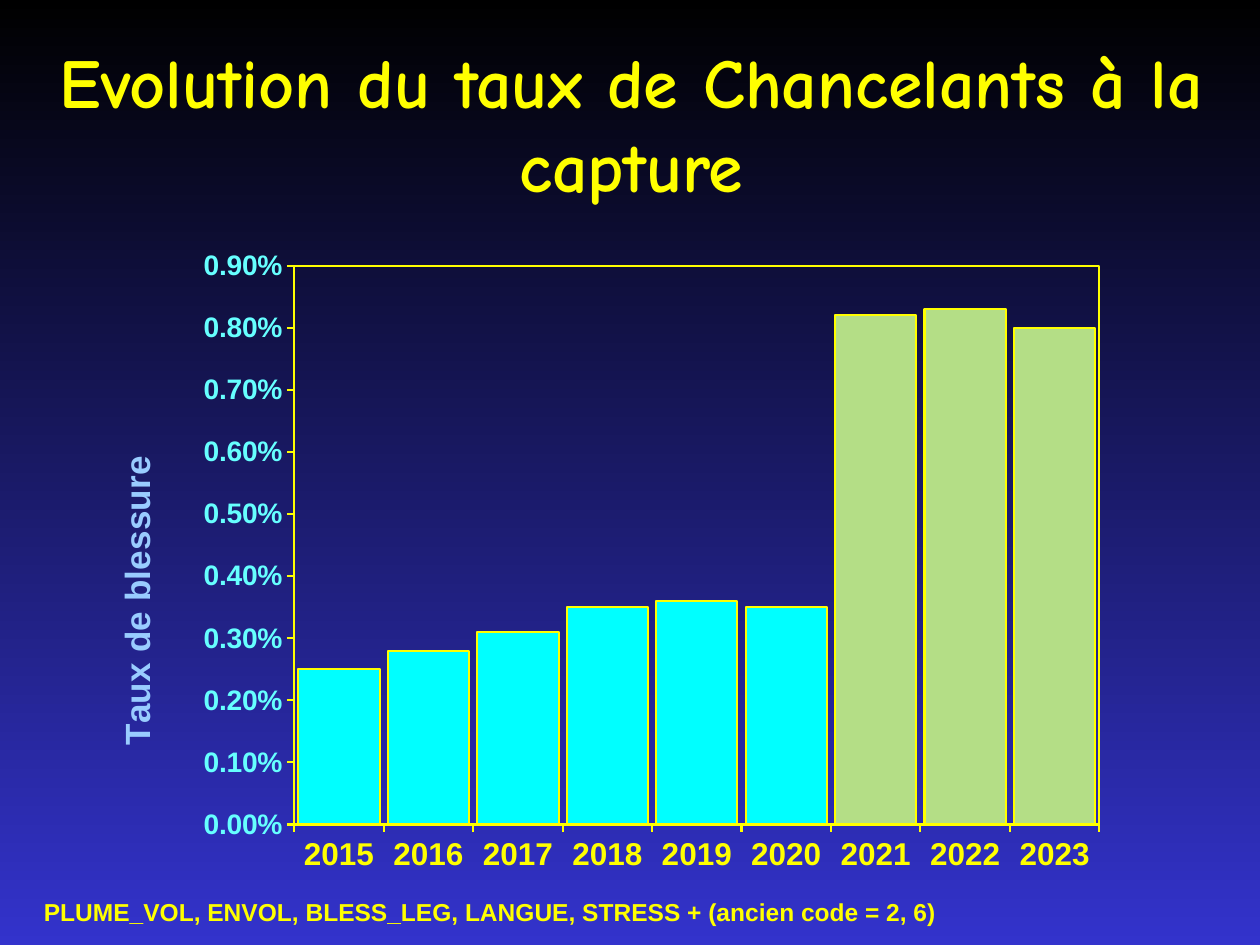
import pptx
import pptx.util
import pptx.dml.color
import pptx.chart.data
import pptx.enum.chart
import pptx.enum.text
import pptx.oxml
import pptx.oxml.ns

Pt = pptx.util.Pt
qn = pptx.oxml.ns.qn
YELLOW, CYAN, GREEN = "FFFF00", "00FFFF", "B4DE86"
AQUA, SKY = "66FFFF", "99CCFF"


def paint(part, tint):
    if hasattr(part, "solid"):
        part.solid()
        part.fore_color.rgb = pptx.dml.color.RGBColor.from_string(tint)
    else:
        part.rgb = pptx.dml.color.RGBColor.from_string(tint)


def style(font, face, size, tint):
    font.name, font.size, font.bold = face, Pt(size), True
    paint(font.fill, tint)


deck = pptx.Presentation()
deck.slide_width = pptx.util.Inches(10)
deck.slide_height = pptx.util.Inches(7.5)
col, row = deck.slide_width / 100, deck.slide_height / 100
slide = deck.slides.add_slide(deck.slide_layouts[6])

back = slide.background.fill
back.gradient()
back.gradient_angle = 270
for stop, place, tint in zip(back.gradient_stops, (0, 1), ("000000", "3333CC")):
    stop.position = place
    paint(stop.color, tint)

texts = [
    ("Evolution du taux de Chancelants à la capture", "Comic Neue", 40,
     (1.7, 3.47, 96.8, 15.2), True, pptx.enum.text.PP_ALIGN.CENTER),
    ("PLUME_VOL, ENVOL, BLESS_LEG, LANGUE, STRESS + (ancien code = 2, 6)", "Arial", 14,
     (2.5, 94.27, 73.3, 4.53), False, pptx.enum.text.PP_ALIGN.LEFT),
]
runs = []
for words, face, size, (x, y, w, h), wrap, align in texts:
    box = slide.shapes.add_textbox(int(x * col), int(y * row), int(w * col), int(h * row))
    box.text_frame.word_wrap = wrap
    line = box.text_frame.paragraphs[0]
    line.alignment = align
    run = line.add_run()
    run.text = words
    style(run.font, face, size, YELLOW)
    runs.append(run)

shade = pptx.oxml.parse_xml(
    '<a:effectLst xmlns:a="http://schemas.openxmlformats.org/drawingml/2006/main">'
    '<a:outerShdw blurRad="38100" dist="38100" dir="2700000" algn="tl">'
    '<a:srgbClr val="000000"/></a:outerShdw></a:effectLst>')
runs[0].font.fill._xPr.find(qn("a:solidFill")).addnext(shade)

data = pptx.chart.data.CategoryChartData(number_format="0.00%")
data.categories = [str(year) for year in range(2015, 2024)]
data.add_series("Series 1", (0.0025, 0.0028, 0.0031, 0.0035, 0.0036, 0.0035, 0.0082, 0.0083, 0.008))
chart = slide.shapes.add_chart(
    pptx.enum.chart.XL_CHART_TYPE.COLUMN_CLUSTERED,
    int(5.9 * col), int(25.87 * row), int(89.5 * col), int(72.4 * row), data).chart
chart.has_legend = chart.has_title = False
chart.font.name, chart.font.size = "Arial", Pt(11.5)

plot = chart.plots[0]
plot.gap_width = 10
plot.vary_by_categories = False
bars = plot.series[0]
bars.invert_if_negative = False
spots = [bars] + [bars.points[i] for i in (6, 7, 8)]
for spot, tint in zip(spots, [CYAN] + [GREEN] * 3):
    paint(spot.format.fill, tint)
    paint(spot.format.line.fill, YELLOW)
    spot.format.line.width = Pt(1.15)

years, rates = chart.category_axis, chart.value_axis
for axis, size, tint in ((years, 18, YELLOW), (rates, 16.1, AQUA)):
    axis.has_major_gridlines = False
    axis.major_tick_mark = pptx.enum.chart.XL_TICK_MARK.OUTSIDE
    style(axis.tick_labels.font, "Arial", size, tint)
    paint(axis.format.line.fill, YELLOW)
    axis.format.line.width = Pt(1.15)
rates.minimum_scale, rates.maximum_scale, rates.major_unit = 0, 0.009, 0.001
rates.tick_labels.number_format = "0.00%"
rates.tick_labels.number_format_is_linked = False
run = rates.axis_title.text_frame.paragraphs[0].add_run()
run.text = "Taux de blessure"
style(run.font, "Arial", 20, SKY)
rates.axis_title.text_frame._txBody.find(qn("a:bodyPr")).set("rot", "-5400000")

space = 'xmlns:c="http://schemas.openxmlformats.org/drawingml/2006/chart"'
area = chart._chartSpace.chart.plotArea
title = rates.axis_title._element
places = [
    (area, 0, 'layoutTarget="inner" xMode="edge" yMode="edge" x="0.195" y="0.031" w="0.714" h="0.817"'),
    (title, 1, 'xMode="edge" yMode="edge" x="0.03" y="0.3"'),
]
for host, spot, rules in places:
    for old in host.findall(qn("c:layout")):
        host.remove(old)
    tags = "".join("<c:%s val=%s/>" % tuple(rule.split("=")) for rule in rules.split())
    host.insert(spot, pptx.oxml.parse_xml(
        f"<c:layout {space}><c:manualLayout>{tags}</c:manualLayout></c:layout>"))

area.append(pptx.oxml.parse_xml(
    f'<c:spPr {space} xmlns:a="http://schemas.openxmlformats.org/drawingml/2006/main">'
    f'<a:noFill/><a:ln w="{Pt(1.15)}"><a:solidFill><a:srgbClr val="{YELLOW}"/>'
    '</a:solidFill></a:ln></c:spPr>'))

deck.save("out.pptx")
